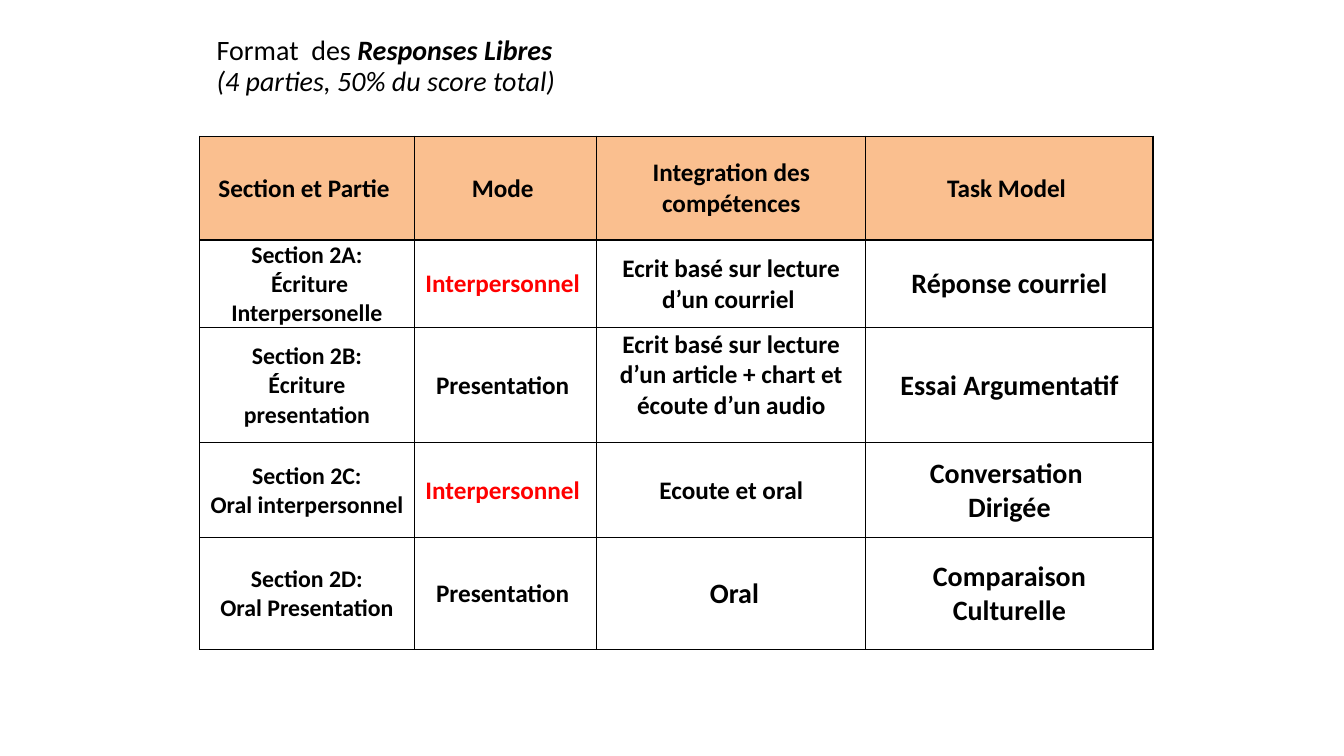
"""Build a slide with a table of the free-response exam sections."""
from dataclasses import dataclass

import lxml.etree
import pptx
import pptx.dml.color
import pptx.enum.text
import pptx.oxml.ns
import pptx.util

Cm = pptx.util.Cm
Pt = pptx.util.Pt


@dataclass(frozen=True)
class Theme:
    font: str = "Calibri"
    ink: str = "000000"
    accent: str = "FF0000"
    header: str = "FABF8F"
    paper: str = "FFFFFF"
    section: int = 17
    body: int = 18
    large: int = 20


THEME = Theme()
COLUMN_WIDTHS = (5.41, 4.6, 6.78, 7.24)
ROW_HEIGHTS = (2.62, 2.21, 2.9, 2.39, 2.82)
HEADINGS = ("Section et Partie ", "Mode ", "Integration des\ncompétences", "Task Model ")
SECTIONS = (
    ("Section 2A:\n Écriture Interpersonelle", "Interpersonnel ",
     "Ecrit basé sur lecture d’un courriel ", "Réponse courriel"),
    ("Section 2B:\nÉcriture presentation", "Presentation ",
     "Ecrit basé sur lecture d’un article + chart et écoute d’un audio",
     "Essai Argumentatif"),
    ("Section 2C:\nOral interpersonnel", "Interpersonnel ",
     "Ecoute et oral", "Conversation \nDirigée"),
    ("Section 2D:\nOral Presentation", "Presentation ",
     " Oral", "Comparaison\vCulturelle"),
)


def style_run(run, size, color=THEME.ink, bold=False, italic=False):
    """Apply the theme font to one run."""
    run.font.name = THEME.font
    run.font.size = Pt(size)
    run.font.bold = bold
    run.font.italic = italic
    run.font.color.rgb = pptx.dml.color.RGBColor.from_string(color)


def add_heading(slide):
    """Add the two-line heading above the table."""
    frame = slide.shapes.add_textbox(Cm(5.21), Cm(0.13), Cm(23.52), Cm(3.12)).text_frame
    frame.word_wrap = True
    frame.vertical_anchor = pptx.enum.text.MSO_ANCHOR.MIDDLE
    heading = frame.paragraphs[0]
    heading.line_spacing = 0.9
    parts = (("Format  des ", False, False), ("Responses Libres", True, True),
             ("(4 parties, 50% du score total)", False, True))
    for index, (words, bold, italic) in enumerate(parts):
        if index == 2:
            heading.add_line_break()
        run = heading.add_run()
        run.text = words
        style_run(run, THEME.large, bold=bold, italic=italic)


def add_borders(cell):
    """Draw a thin line on every side of a cell."""
    properties = cell._tc.get_or_add_tcPr()
    qn = pptx.oxml.ns.qn
    for index, side in enumerate(("lnL", "lnR", "lnT", "lnB")):
        line = lxml.etree.Element(qn(f"a:{side}"), w=str(Pt(1)))
        fill = lxml.etree.SubElement(line, qn("a:solidFill"))
        lxml.etree.SubElement(fill, qn("a:srgbClr"), val=THEME.ink)
        properties.insert(index, line)


def fill_cell(cell, words, size, color, background):
    """Write centred bold text in a bordered cell."""
    cell.text_frame.text = words
    cell.vertical_anchor = pptx.enum.text.MSO_ANCHOR.MIDDLE
    cell.margin_left = cell.margin_right = Cm(0.18)
    cell.margin_top = Cm(0.02)
    cell.margin_bottom = 0
    cell.fill.solid()
    cell.fill.fore_color.rgb = pptx.dml.color.RGBColor.from_string(background)
    for paragraph in cell.text_frame.paragraphs:
        paragraph.alignment = pptx.enum.text.PP_ALIGN.CENTER
        for run in paragraph.runs:
            style_run(run, size, color, bold=True)
    add_borders(cell)


def add_section_table(slide):
    """Add the table with one row per exam section."""
    sections = slide.shapes.add_table(
        len(ROW_HEIGHTS), len(COLUMN_WIDTHS), Cm(5.03), Cm(3.43),
        Cm(sum(COLUMN_WIDTHS)), Cm(sum(ROW_HEIGHTS))).table
    sections.first_row = sections.horz_banding = False
    for column, width in zip(sections.columns, COLUMN_WIDTHS):
        column.width = Cm(width)
    for row, height in zip(sections.rows, ROW_HEIGHTS):
        row.height = Cm(height)
    for index, heading in enumerate(HEADINGS):
        fill_cell(sections.cell(0, index), heading, THEME.body, THEME.ink, THEME.header)
    column_sizes = (THEME.section, THEME.body, THEME.body, THEME.large)
    for row_index, entries in enumerate(SECTIONS, start=1):
        for index, (words, size) in enumerate(zip(entries, column_sizes)):
            color = THEME.accent if words.startswith("Interpersonnel") else THEME.ink
            if words.strip() == "Oral":
                size = THEME.large
            fill_cell(sections.cell(row_index, index), words, size, color, THEME.paper)
    sections.cell(2, 2).margin_bottom = Cm(0.53)


def main():
    """Create and save the presentation."""
    presentation = pptx.Presentation()
    presentation.slide_width = Cm(33.87)
    presentation.slide_height = Cm(19.05)
    slide = presentation.slides.add_slide(presentation.slide_layouts[6])
    add_heading(slide)
    add_section_table(slide)
    presentation.save("out.pptx")


if __name__ == "__main__":
    main()
